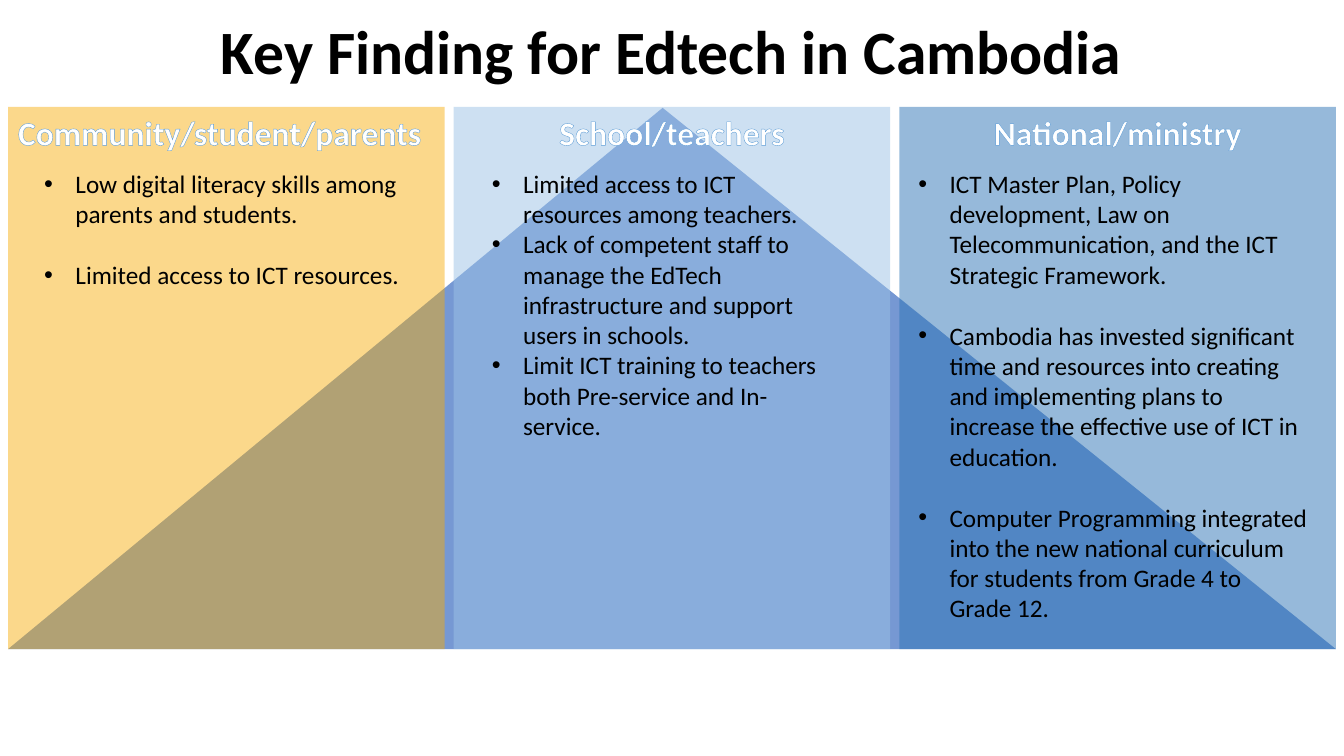
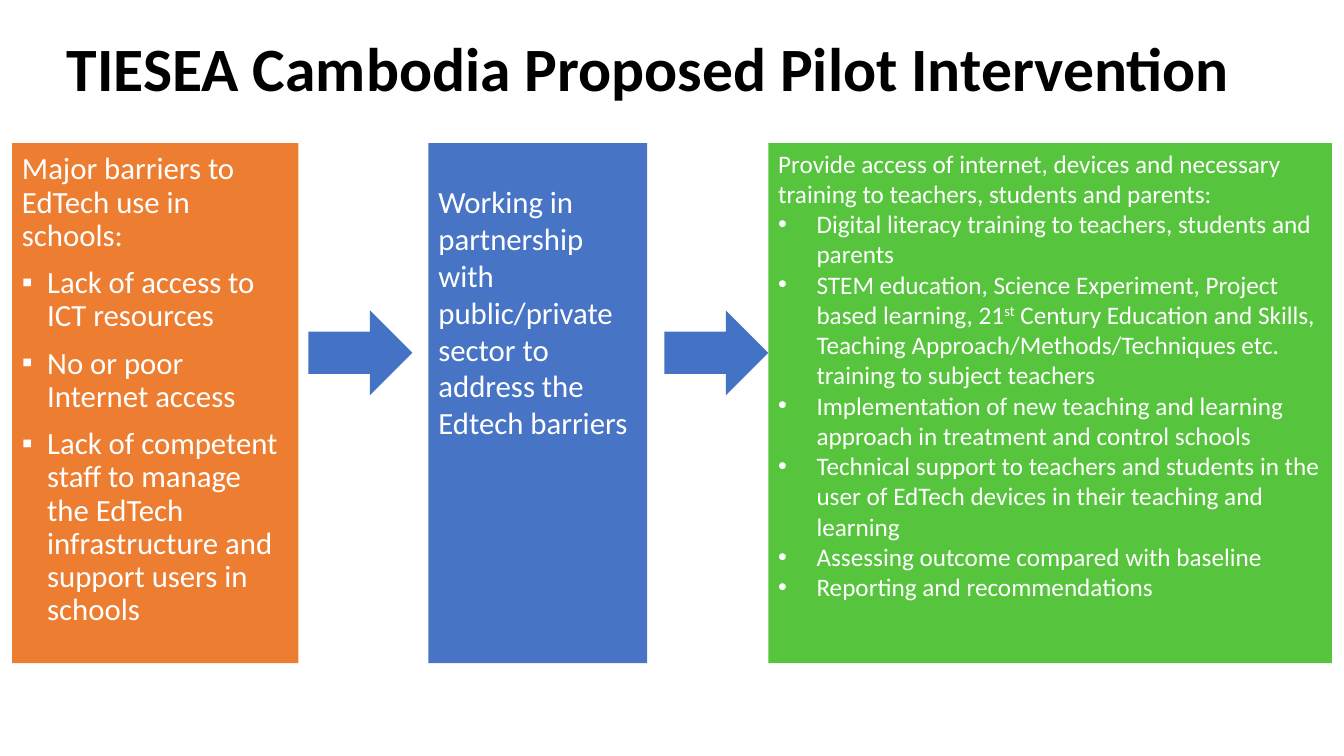
import pptx
import pptx.util
from lxml import etree
from pptx.dml.color import RGBColor
from pptx.enum.shapes import MSO_SHAPE
from pptx.enum.text import MSO_ANCHOR, PP_ALIGN
from pptx.oxml.ns import qn

PX = 9144
SLIDE_WIDTH, SLIDE_HEIGHT = 1333, 750
FONT = "Calibri"
BLACK = RGBColor(0x00, 0x00, 0x00)
WHITE = RGBColor(0xFF, 0xFF, 0xFF)
BLUE = RGBColor(0x44, 0x72, 0xC4)
ORANGE = RGBColor(0xED, 0x7D, 0x31)
GREEN = RGBColor(0x56, 0xC4, 0x3C)
AMBER = RGBColor(0xF8, 0xAC, 0x04)
PALE_BLUE = RGBColor(0x9D, 0xC3, 0xE6)
DEEP_BLUE = RGBColor(0x2E, 0x75, 0xB6)
OUTLINE_BLUE = RGBColor(0x5B, 0x9B, 0xD5)

TITLE_STYLE = {"size": 44, "bold": True, "color": BLACK, "align": PP_ALIGN.CENTER,
               "line_spacing": 0.9}
HEADING_STYLE = {"size": 24, "bold": True, "color": WHITE, "outline": OUTLINE_BLUE}
FINDING_STYLE = {"size": 18, "color": BLACK, "bullet": "•", "indent": 31}
BARRIER_STYLE = {"size": 22, "color": WHITE, "line_spacing": 0.9, "space_before": 10}
PARTNER_STYLE = {"size": 22, "color": WHITE}
ACTIVITY_STYLE = {"size": 18, "color": WHITE}

FINDINGS_TITLE = "Key Finding for Edtech in Cambodia"
FINDINGS_TITLE_BOX = (125, 0, 1083, 108)
COLUMN_LEFT, COLUMN_TOP, COLUMN_PITCH = 8, 106, 442
COLUMN_WIDTH, COLUMN_HEIGHT = 433, 538
TRIANGLE_BOX = (8, 107, 1317, 537)
COLUMNS = [
    {"heading": "Community/student/parents", "align": PP_ALIGN.LEFT,
     "fill": AMBER, "opacity": 46, "list_box": (34, 162, 382, 266), "gap": 22,
     "findings": [
         "Low digital literacy skills among parents and students.",
         "Limited access to ICT resources."]},
    {"heading": "School/teachers", "align": PP_ALIGN.CENTER,
     "fill": PALE_BLUE, "opacity": 50, "list_box": (478, 162, 360, 390), "gap": 0,
     "findings": [
         "Limited access to ICT resources among teachers.",
         "Lack of competent staff to manage the EdTech infrastructure and support "
         "users in schools.",
         "Limit ICT training to teachers both Pre-service and In-service."]},
    {"heading": "National/ministry", "align": PP_ALIGN.CENTER,
     "fill": DEEP_BLUE, "opacity": 50, "list_box": (901, 162, 407, 495), "gap": 22,
     "findings": [
         "ICT Master Plan, Policy development, Law on Telecommunication, and the ICT "
         "Strategic Framework.",
         "Cambodia has invested significant time and resources into creating and "
         "implementing plans to increase the effective use of ICT in education.",
         "Computer Programming integrated into the new national curriculum for "
         "students from Grade 4 to Grade 12."]},
]

PILOT_TITLE = "TIESEA Cambodia Proposed Pilot Intervention"
PILOT_TITLE_BOX = (46, 0, 1195, 142)
PANEL_TOP, PANEL_HEIGHT = 142, 516
ARROW_LEFTS = (306, 659)
ARROW_TOP, ARROW_WIDTH, ARROW_HEIGHT = 308, 103, 84
PANELS = [
    {"left": 12, "width": 284, "fill": ORANGE, "opacity": 100, "inset_top": 10,
     "style": BARRIER_STYLE, "bullet": {"bullet": "▪", "indent": 25},
     "intro": "Major barriers to EdTech use in schools:",
     "items": [
         "Lack of access to ICT resources",
         "No or poor Internet access",
         "Lack of competent staff to manage the EdTech infrastructure and support "
         "users in schools"]},
    {"left": 425, "width": 217, "fill": BLUE, "opacity": 98, "inset_top": 39,
     "style": PARTNER_STYLE, "bullet": {},
     "intro": "Working in partnership with public/private sector to address the "
              "Edtech barriers",
     "items": []},
    {"left": 762, "width": 559, "fill": GREEN, "opacity": 100, "inset_top": 5,
     "style": ACTIVITY_STYLE, "bullet": {"bullet": "•", "indent": 38},
     "intro": "Provide access of internet, devices and necessary training to "
              "teachers, students and parents:",
     "items": [
         "Digital literacy training to teachers, students and parents",
         ("STEM education, Science Experiment, Project based learning, 21", "st",
          " Century Education and Skills, Teaching Approach/Methods/Techniques etc. "
          "training to subject teachers"),
         "Implementation of new teaching and learning approach in treatment and "
         "control schools",
         "Technical support to teachers and students in the user of EdTech devices "
         "in their teaching and learning",
         "Assessing outcome compared with baseline",
         "Reporting and recommendations"]},
]


def emu(box):
    return [length * PX for length in box]


def add_panel(slide, kind, box, color, opacity=100):
    shape = slide.shapes.add_shape(kind, *emu(box))
    shape.shadow.inherit = False
    shape.line.fill.background()
    shape.fill.solid()
    shape.fill.fore_color.rgb = color
    if opacity < 100:
        color_element = shape.fill._xPr.find(qn("a:solidFill"))[0]
        etree.SubElement(color_element, qn("a:alpha"), val=str(opacity * 1000))
    return shape


def add_bullet(paragraph, character, indent):
    properties = paragraph._p.get_or_add_pPr()
    properties.set("marL", str(indent * PX))
    properties.set("indent", str(-indent * PX))
    etree.SubElement(properties, qn("a:buFont"), typeface="Arial")
    etree.SubElement(properties, qn("a:buChar"), char=character)


def add_run(paragraph, text, style, superscript=False):
    run = paragraph.add_run()
    run.text = text
    font_format = {"name": FONT, "size": pptx.util.Pt(style["size"]),
                   "bold": style.get("bold", False)}
    for attribute, value in font_format.items():
        setattr(run.font, attribute, value)
    run.font.color.rgb = style["color"]
    properties = run._r.get_or_add_rPr()
    if superscript:
        properties.set("baseline", "30000")
    if "outline" in style:
        line = etree.Element(qn("a:ln"), w=str(pptx.util.Pt(0.8)))
        fill = etree.SubElement(line, qn("a:solidFill"))
        etree.SubElement(fill, qn("a:srgbClr"), val=str(style["outline"]))
        properties.insert(0, line)


def write_text(shape, entries, anchor=MSO_ANCHOR.TOP, inset_top=5):
    """Write (text, style) entries; a tuple text is (before, superscript, after)."""
    frame = shape.text_frame
    frame_format = {"word_wrap": True, "vertical_anchor": anchor,
                    "margin_left": 10 * PX, "margin_right": 10 * PX,
                    "margin_top": inset_top * PX, "margin_bottom": 5 * PX}
    for attribute, value in frame_format.items():
        setattr(frame, attribute, value)
    for index, (text, style) in enumerate(entries):
        paragraph = frame.add_paragraph() if index else frame.paragraphs[0]
        space = style.get("space_before", 0) if index else 0
        paragraph_format = {"alignment": style.get("align", PP_ALIGN.LEFT),
                            "line_spacing": style.get("line_spacing", 1.0),
                            "space_before": pptx.util.Pt(space)}
        for attribute, value in paragraph_format.items():
            setattr(paragraph, attribute, value)
        if "bullet" in style:
            add_bullet(paragraph, style["bullet"], style["indent"])
        parts = (text,) if isinstance(text, str) else text
        for position, part in enumerate(parts):
            add_run(paragraph, part, style, superscript=position == 1)


def add_titled_slide(presentation, title, box):
    slide = presentation.slides.add_slide(presentation.slide_layouts[6])
    write_text(slide.shapes.add_textbox(*emu(box)), [(title, TITLE_STYLE)],
               MSO_ANCHOR.MIDDLE)
    return slide


def build_findings(presentation):
    slide = add_titled_slide(presentation, FINDINGS_TITLE, FINDINGS_TITLE_BOX)
    triangle = add_panel(slide, MSO_SHAPE.ISOSCELES_TRIANGLE, TRIANGLE_BOX, BLUE, 73)
    triangle.adjustments[0] = 0.493
    for index, column in enumerate(COLUMNS):
        box = (COLUMN_LEFT + index * COLUMN_PITCH, COLUMN_TOP,
               COLUMN_WIDTH, COLUMN_HEIGHT)
        panel = add_panel(slide, MSO_SHAPE.RECTANGLE, box,
                          column["fill"], column["opacity"])
        write_text(panel, [(column["heading"],
                            HEADING_STYLE | {"align": column["align"]})])
        style = FINDING_STYLE | {"space_before": column["gap"]}
        findings = slide.shapes.add_textbox(*emu(column["list_box"]))
        write_text(findings, [(text, style) for text in column["findings"]])


def build_pilot(presentation):
    slide = add_titled_slide(presentation, PILOT_TITLE, PILOT_TITLE_BOX)
    for panel in PANELS:
        box = (panel["left"], PANEL_TOP, panel["width"], PANEL_HEIGHT)
        shape = add_panel(slide, MSO_SHAPE.RECTANGLE, box,
                          panel["fill"], panel["opacity"])
        item_style = panel["style"] | panel["bullet"]
        entries = [(panel["intro"], panel["style"])]
        entries += [(item, item_style) for item in panel["items"]]
        write_text(shape, entries, inset_top=panel["inset_top"])
    for left in ARROW_LEFTS:
        add_panel(slide, MSO_SHAPE.RIGHT_ARROW,
                  (left, ARROW_TOP, ARROW_WIDTH, ARROW_HEIGHT), BLUE)


def main():
    presentation = pptx.Presentation()
    presentation.slide_width = SLIDE_WIDTH * PX
    presentation.slide_height = SLIDE_HEIGHT * PX
    build_findings(presentation)
    build_pilot(presentation)
    presentation.save("out.pptx")


if __name__ == "__main__":
    main()
